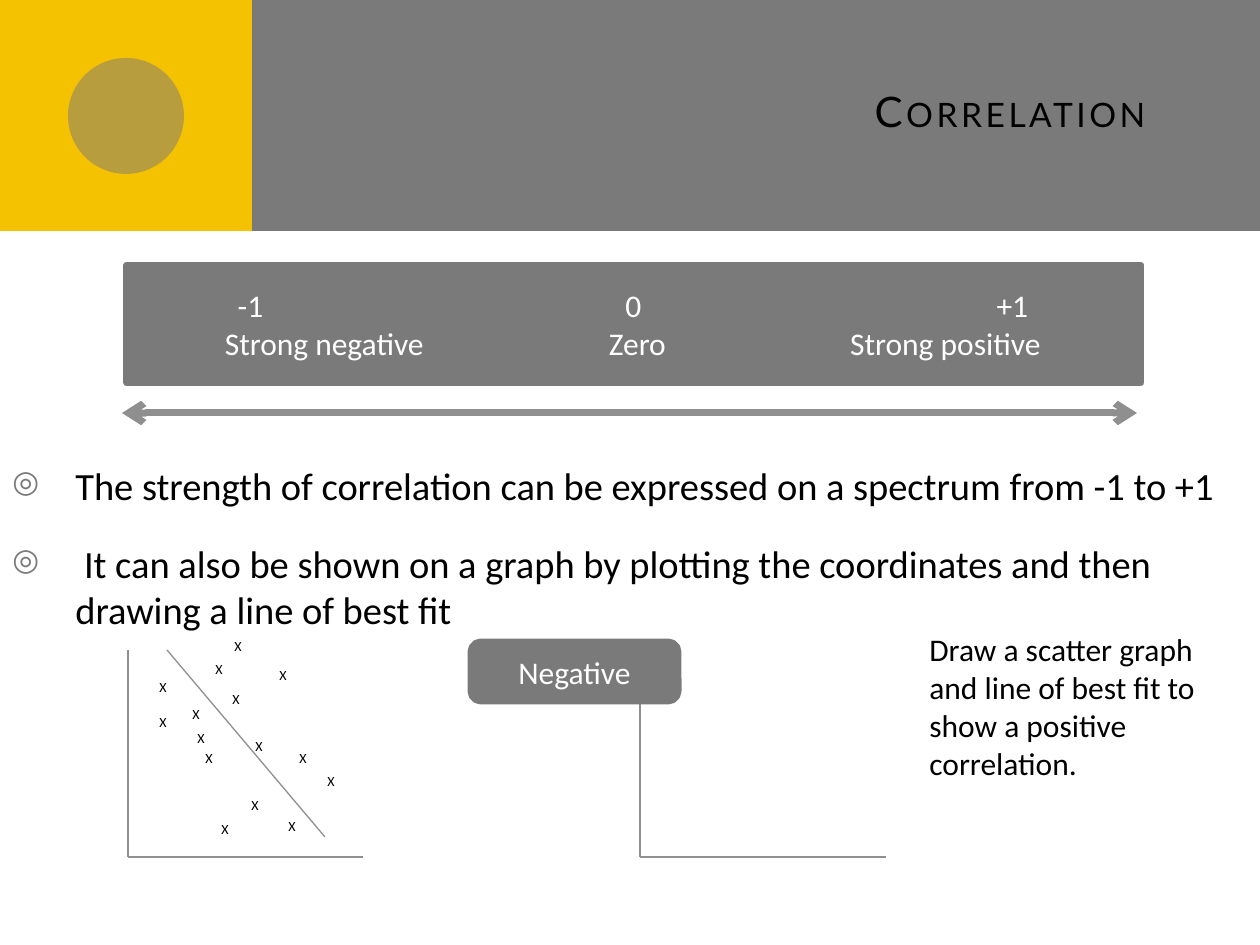
from dataclasses import dataclass

from lxml import etree
from pptx import Presentation
from pptx.dml.color import RGBColor
from pptx.enum.shapes import MSO_CONNECTOR, MSO_SHAPE
from pptx.enum.text import MSO_ANCHOR, MSO_AUTO_SIZE, PP_ALIGN
from pptx.oxml.ns import qn
from pptx.util import Emu, Pt

RECTANGLE = MSO_SHAPE.RECTANGLE
ROUNDED = MSO_SHAPE.ROUNDED_RECTANGLE
OVAL = MSO_SHAPE.OVAL
STRAIGHT = MSO_CONNECTOR.STRAIGHT
TOP, MIDDLE = MSO_ANCHOR.TOP, MSO_ANCHOR.MIDDLE
LEFT, CENTER, RIGHT = PP_ALIGN.LEFT, PP_ALIGN.CENTER, PP_ALIGN.RIGHT
EMU_PER_PX = 914400 // 126


@dataclass(frozen=True)
class Theme:
    gray: str = "7A7A7A"
    yellow: str = "F5C201"
    line: str = "8F8F8F"
    black: str = "000000"
    white: str = "FFFFFF"
    title_font: str = "Lato"
    body_font: str = "Calibri"
    title_size: int = 24
    bullet_size: int = 22
    text_size: int = 18
    mark_size: int = 8
    thick: float = 4
    thin: float = 0.75


THEME = Theme()

# Each row of the spectrum: labels with their centres inside the bar
SPECTRUM = [
    [("-1", 111), ("0", 494), ("+1", 873)],
    [("Strong negative", 185), ("Zero", 498), ("Strong positive", 806)],
]
BULLETS = [
    "The strength of correlation can be expressed on a spectrum from -1 to +1",
    " It can also be shown on a graph by plotting the coordinates and then drawing a line of best fit",
]
# Top left corners of the scatter marks
MARKS = [
    (147, 672), (147, 707), (180, 699), (193, 743), (315, 766),
    (209, 814), (239, 790), (276, 811), (203, 654), (220, 684),
    (185, 723), (287, 743), (243, 731), (267, 660), (222, 631),
]


def px(value):
    return Emu(value * EMU_PER_PX)


def style_paragraph(paragraph, size, color, align=LEFT, font=THEME.body_font):
    paragraph.alignment = align
    paragraph.font.name = font
    paragraph.font.size = Pt(size)
    paragraph.font.color.rgb = RGBColor.from_string(color)


def add_block(slide, kind, box, color, outline=None, alpha=None):
    shape = slide.shapes.add_shape(kind, *map(px, box))
    shape.shadow.inherit = False
    shape.fill.solid()
    shape.fill.fore_color.rgb = RGBColor.from_string(color)
    if outline:
        shape.line.color.rgb = RGBColor.from_string(color)
        shape.line.width = Pt(outline)
    else:
        shape.line.fill.background()
    if alpha:
        fill_color = shape.fill._xPr.find(".//" + qn("a:srgbClr"))
        etree.SubElement(fill_color, qn("a:alpha")).set("val", str(alpha * 1000))
    shape.text_frame.vertical_anchor = MIDDLE
    return shape


def add_text(slide, box, text, size, align=LEFT, anchor=TOP,
             font=THEME.body_font, grow=False):
    frame = slide.shapes.add_textbox(*map(px, box)).text_frame
    frame.word_wrap = True
    frame.vertical_anchor = anchor
    if grow:
        frame.auto_size = MSO_AUTO_SIZE.SHAPE_TO_FIT_TEXT
    paragraph = frame.paragraphs[0]
    paragraph.text = text
    style_paragraph(paragraph, size, THEME.black, align, font)
    return frame


def add_line(slide, start, end, width=THEME.thin, arrows=False):
    connector = slide.shapes.add_connector(STRAIGHT, *map(px, start + end))
    connector.line.color.rgb = RGBColor.from_string(THEME.line)
    connector.line.width = Pt(width)
    properties = connector._element.spPr
    if arrows:
        for end_name in ("a:headEnd", "a:tailEnd"):
            etree.SubElement(properties.find(qn("a:ln")), qn(end_name)).set("type", "arrow")
    etree.SubElement(properties, qn("a:effectLst"))


def add_axes(slide, left, right, top=650, bottom=857):
    add_line(slide, (left, top), (left, bottom))
    add_line(slide, (left, bottom), (right, bottom))


def set_tabs(paragraph, positions):
    properties = paragraph._p.get_or_add_pPr()
    tabs = etree.Element(qn("a:tabLst"))
    for position in positions:
        tab = etree.SubElement(tabs, qn("a:tab"))
        tab.set("pos", str(px(position)))
        tab.set("algn", "ctr")
    properties.find(qn("a:defRPr")).addprevious(tabs)


def set_bullet(paragraph):
    properties = paragraph._p.get_or_add_pPr()
    properties.set("marL", str(px(63)))
    properties.set("indent", str(-px(63)))
    color = etree.Element(qn("a:buClr"))
    etree.SubElement(color, qn("a:srgbClr")).set("val", THEME.gray)
    size = etree.Element(qn("a:buSzPct"))
    size.set("val", "80000")
    character = etree.Element(qn("a:buChar"))
    character.set("char", "◎")
    for element in (color, size, character):
        properties.find(qn("a:defRPr")).addprevious(element)


def add_header(slide):
    add_block(slide, RECTANGLE, (0, 0, 1260, 231), THEME.gray)
    add_block(slide, RECTANGLE, (0, 0, 252, 231), THEME.yellow)
    add_block(slide, OVAL, (68, 58, 116, 116), THEME.gray, alpha=50)
    frame = add_text(slide, (336, 32, 861, 158), "Correlation", THEME.title_size,
                     RIGHT, MIDDLE, THEME.title_font)
    run_properties = frame.paragraphs[0].runs[0].font._element
    run_properties.set("cap", "small")
    run_properties.set("spc", "200")


def add_spectrum(slide):
    bar = add_block(slide, RECTANGLE, (127, 265, 1014, 118), THEME.gray, THEME.thick)
    frame = bar.text_frame
    for index, row in enumerate(SPECTRUM):
        paragraph = frame.add_paragraph() if index else frame.paragraphs[0]
        paragraph.text = "".join("\t" + label for label, _ in row)
        style_paragraph(paragraph, THEME.text_size, THEME.white)
        set_tabs(paragraph, [center for _, center in row])
    add_line(slide, (122, 413), (1137, 413), THEME.thick, arrows=True)


def add_bullets(slide):
    frame = add_text(slide, (0, 220, 1260, 672), BULLETS[0], THEME.bullet_size)
    frame.margin_top = px(242)
    for text in BULLETS[1:]:
        paragraph = frame.add_paragraph()
        paragraph.text = text
        style_paragraph(paragraph, THEME.bullet_size, THEME.black)
    for paragraph in frame.paragraphs:
        paragraph.space_before = Pt(18)
        set_bullet(paragraph)


def add_graphs(slide):
    # Negative example with its line of best fit
    add_axes(slide, 128, 363)
    add_line(slide, (167, 650), (325, 837))
    for left, top in MARKS:
        add_text(slide, (left, top, 39, 30), "X", THEME.mark_size, grow=True)

    # Empty graph for the positive exercise
    add_axes(slide, 640, 886)
    label = add_block(slide, ROUNDED, (471, 642, 207, 59), THEME.gray, THEME.thick)
    paragraph = label.text_frame.paragraphs[0]
    paragraph.text = "Negative"
    style_paragraph(paragraph, THEME.text_size, THEME.white, CENTER)
    add_text(slide, (917, 624, 307, 165),
             "Draw a scatter graph and line of best fit to show a positive correlation.",
             THEME.text_size, grow=True)


def main():
    presentation = Presentation()
    presentation.slide_width, presentation.slide_height = px(1260), px(945)
    slide = presentation.slides.add_slide(presentation.slide_layouts[6])
    add_header(slide)
    add_bullets(slide)
    add_spectrum(slide)
    add_graphs(slide)
    presentation.save("out.pptx")


if __name__ == "__main__":
    main()
